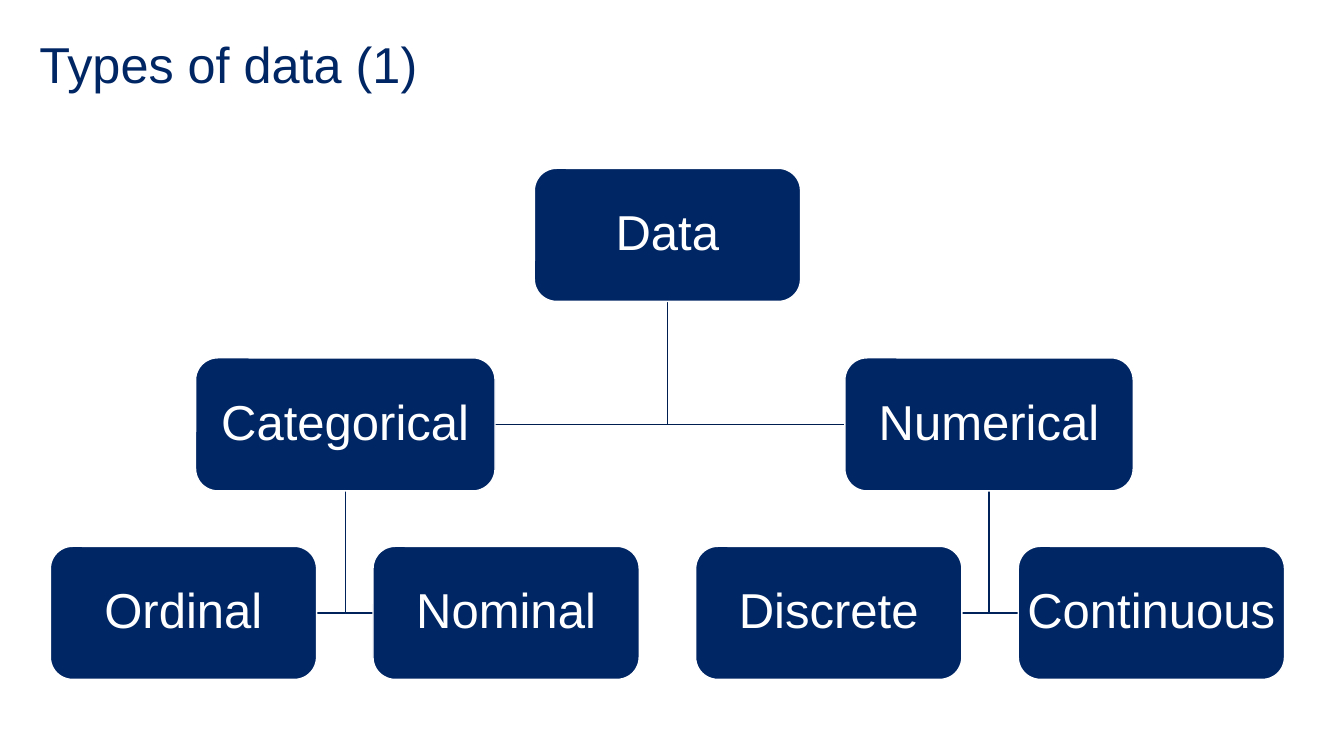
from pptx import Presentation
from pptx import util as u
from pptx.dml.color import RGBColor
from pptx.enum import shapes, text

NAVY, WHITE = "002664", "FFFFFF"
BOX_W, BOX_H = 2.64, 1.32
ROW_TOPS = [1.67, 3.55, 5.42]

# Label, row, left, width
NODES = [
    ("Data", 0, 5.3, BOX_W),
    ("Categorical", 1, 1.94, 2.97),
    ("Numerical", 1, 8.38, 2.86),
] + [(label, 2, 0.5 + i * 3.2, BOX_W)
     for i, label in enumerate(["Ordinal", "Nominal", "Discrete", "Continuous"])]

# Parent, its two children, line colour
BRANCHES = [
    ("Data", ("Categorical", "Numerical"), "001E50"),
    ("Categorical", ("Ordinal", "Nominal"), "00225B"),
    ("Numerical", ("Discrete", "Continuous"), "00225B"),
]


def rgb(value):
    return RGBColor.from_string(value)


def write(tf, content, size, color, align=text.PP_ALIGN.LEFT, inset=0, wrap=True):
    tf.word_wrap = wrap
    tf.vertical_anchor = text.MSO_ANCHOR.MIDDLE
    tf.margin_left = tf.margin_right = u.Inches(inset)
    tf.margin_top = tf.margin_bottom = u.Inches(inset)
    p = tf.paragraphs[0]
    p.alignment = align
    p.line_spacing = 0.9
    r = p.add_run()
    r.text = content
    r.font.name = "Arial"
    r.font.size = u.Pt(size)
    r.font.color.rgb = rgb(color)


def add_title(s, content):
    sp = s.shapes.add_textbox(u.Inches(0.39), u.Inches(0.37),
                              u.Inches(12.56), u.Inches(0.6))
    write(sp.text_frame, content, 36, NAVY)


def add_node(s, label, row, left, width):
    sp = s.shapes.add_shape(shapes.MSO_SHAPE.ROUNDED_RECTANGLE,
                            u.Inches(left), u.Inches(ROW_TOPS[row]),
                            u.Inches(width), u.Inches(BOX_H))
    sp.shadow.inherit = False
    sp.fill.solid()
    sp.fill.fore_color.rgb = rgb(NAVY)
    sp.line.color.rgb = rgb(WHITE)
    sp.line.width = u.Pt(1)
    write(sp.text_frame, label, 35, WHITE, text.PP_ALIGN.CENTER, 0.02, wrap=False)


def add_elbow(s, parent, child, color):
    """Run down from the parent's base, then across to the child's near side."""
    _, parent_row, parent_left, parent_w = parent
    _, child_row, child_left, child_w = child
    middle = parent_left + parent_w / 2
    near_side = child_left if child_left > middle else child_left + child_w
    x, end = u.Inches(middle), u.Inches(near_side)
    top = u.Inches(ROW_TOPS[parent_row] + BOX_H)
    bottom = u.Inches(ROW_TOPS[child_row] + BOX_H / 2)
    builder = s.shapes.build_freeform(x, top)
    builder.add_line_segments([(x, bottom), (end, bottom)], close=False)
    sp = builder.convert_to_shape()
    sp.shadow.inherit = False
    sp.fill.background()
    sp.line.color.rgb = rgb(color)
    sp.line.width = u.Pt(1)


def main():
    prs = Presentation()
    prs.slide_width, prs.slide_height = u.Inches(13.33), u.Inches(7.5)
    s = prs.slides.add_slide(prs.slide_layouts[6])
    add_title(s, "Types of data (1)")

    # Branches lie behind the boxes
    by_label = {node[0]: node for node in NODES}
    for parent, children, color in BRANCHES:
        for child in children:
            add_elbow(s, by_label[parent], by_label[child], color)

    # Boxes of the tree
    for node in NODES:
        add_node(s, *node)
    prs.save("out.pptx")


if __name__ == "__main__":
    main()
